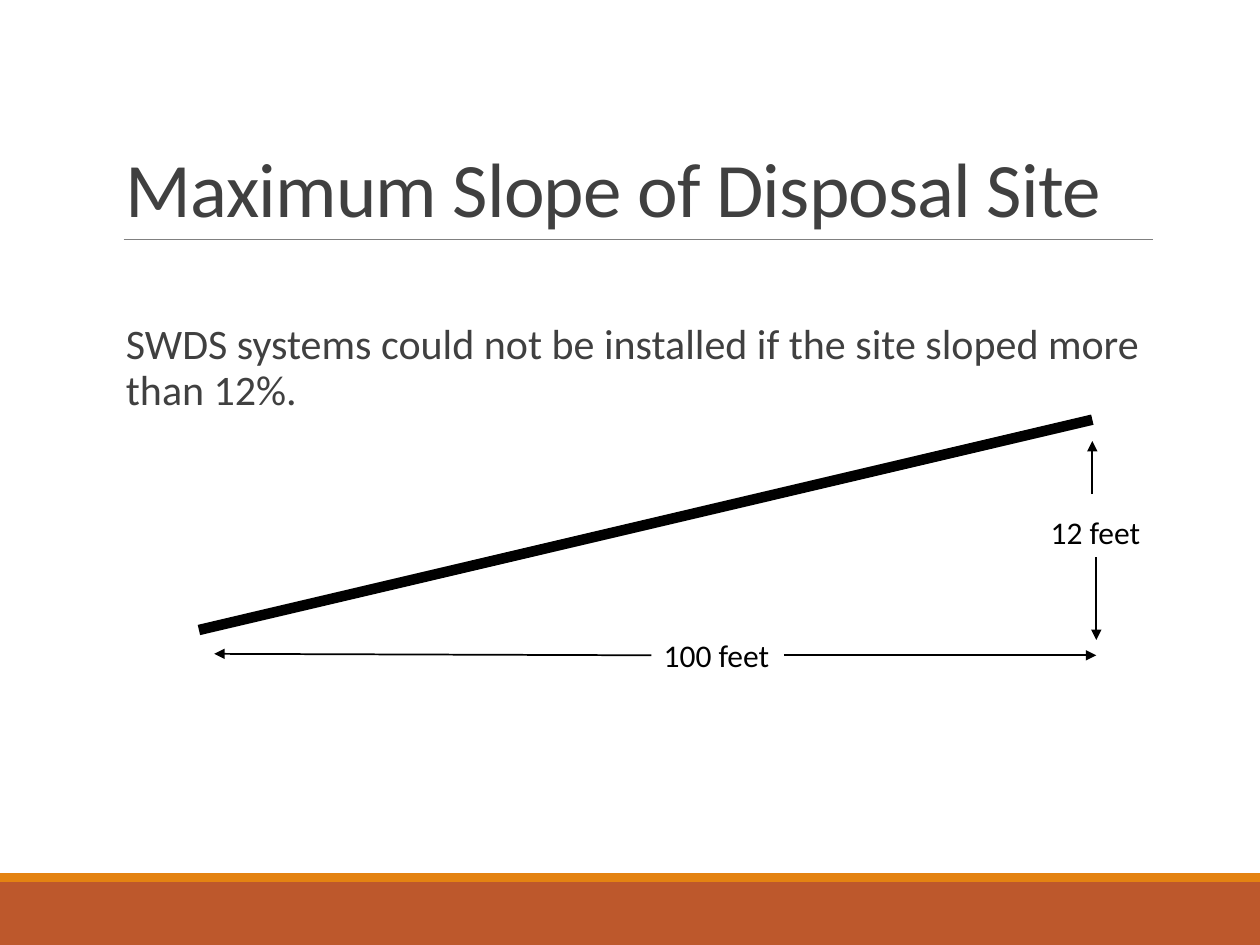
from lxml.etree import SubElement
from pptx import Presentation
from pptx.dml.color import RGBColor
from pptx.enum.shapes import MSO_CONNECTOR, MSO_SHAPE
from pptx.enum.text import MSO_ANCHOR
from pptx.oxml.ns import qn
from pptx.util import Cm, Pt


def color(hex_text):
    """Turn a hex string into a colour."""
    return RGBColor.from_string(hex_text)


def add_text(s, text, x, y, w, h, size=18, fill="000000", anchor=MSO_ANCHOR.TOP,
             wrap=True, inset=0.25, line_spacing=1.0, tracking=0):
    """Add a text box holding one formatted paragraph."""
    tf = s.shapes.add_textbox(Cm(x), Cm(y), Cm(w), Cm(h)).text_frame
    tf.word_wrap = wrap
    tf.vertical_anchor = anchor
    tf.margin_left = tf.margin_right = Cm(inset)
    p = tf.paragraphs[0]
    p.line_spacing = line_spacing
    r = p.add_run()
    r.text = text
    r.font.name = "Calibri"
    r.font.size = Pt(size)
    r.font.color.rgb = color(fill)
    if tracking:
        r.font._element.set("spc", str(int(tracking * 100)))


def add_line(s, x1, y1, x2, y2, width=1, fill="000000", arrow=False):
    """Add a straight line, with an arrowhead at its end if asked."""
    line = s.shapes.add_connector(MSO_CONNECTOR.STRAIGHT, Cm(x1), Cm(y1), Cm(x2), Cm(y2))
    line.line.width = Pt(width)
    line.line.color.rgb = color(fill)
    if arrow:
        SubElement(line.line._get_or_add_ln(), qn("a:tailEnd"), type="triangle")
    SubElement(line._element.spPr, qn("a:effectLst"))


def add_band(s, x, y, w, h, fill):
    """Add a plain filled rectangle."""
    sp = s.shapes.add_shape(MSO_SHAPE.RECTANGLE, Cm(x), Cm(y), Cm(w), Cm(h))
    sp.shadow.inherit = False
    sp.fill.solid()
    sp.fill.fore_color.rgb = color(fill)
    sp.line.fill.background()


def add_footer(s, x, y, w, h):
    """Draw the footer band with its thin stripe on top."""
    stripe = 0.18
    add_band(s, x, y + stripe, w, h - stripe, "BD582C")
    add_band(s, x, y, w, stripe, "E48312")


def add_title(s, x, y, w, h):
    """Place the title and the rule below it."""
    add_line(s, x + 0.2, y + h, x + w, y + h, width=0.5, fill="808080")
    add_text(s, "Maximum Slope of Disposal Site", x, y, w, h, size=44, fill="404040",
             anchor=MSO_ANCHOR.BOTTOM, line_spacing=0.85, tracking=-0.5)


def add_body(s, x, y, w, h):
    """Place the statement about the slope limit."""
    add_text(s, "SWDS systems could not be installed if the site sloped more than 12%.",
             x, y, w, h, size=24, fill="404040", inset=0, line_spacing=0.9)


def add_diagram(s, x, y, w, h):
    """Draw the slope with its run and rise dimensions."""
    add_line(s, x, y + h, x + w, y, width=6)
    run_y, rise_x = y + h + 0.51, x + w + 0.08
    label_h, run_x, run_w = 1.02, x + 9.12, 2.67
    add_text(s, "100 feet", run_x, y + h, run_w, label_h, wrap=False)
    add_text(s, "12 feet", x + w - 1.09, y + 1.75, 2.34, label_h, wrap=False)
    for ends in (
        (run_x, run_y, x + 0.31, run_y - 0.03),
        (run_x + run_w, run_y, rise_x, run_y),
        (x + w, y + 1.5, x + w, y + 0.43),
        (rise_x, y + 2.77, rise_x, y + h + 0.2),
    ):
        add_line(s, *ends, arrow=True)


def main():
    """Build the slide and save it."""
    prs = Presentation()
    prs.slide_width, prs.slide_height = Cm(25.4), Cm(19.05)
    s = prs.slides.add_slide(prs.slide_layouts[6])
    add_footer(s, 0, 17.6, 25.4, 1.45)
    add_title(s, 2.29, 0.79, 20.95, 4.04)
    add_body(s, 2.54, 6.4, 20.7, 2.1)
    add_diagram(s, 4.01, 8.46, 18.01, 4.24)
    prs.save("out.pptx")


if __name__ == "__main__":
    main()
